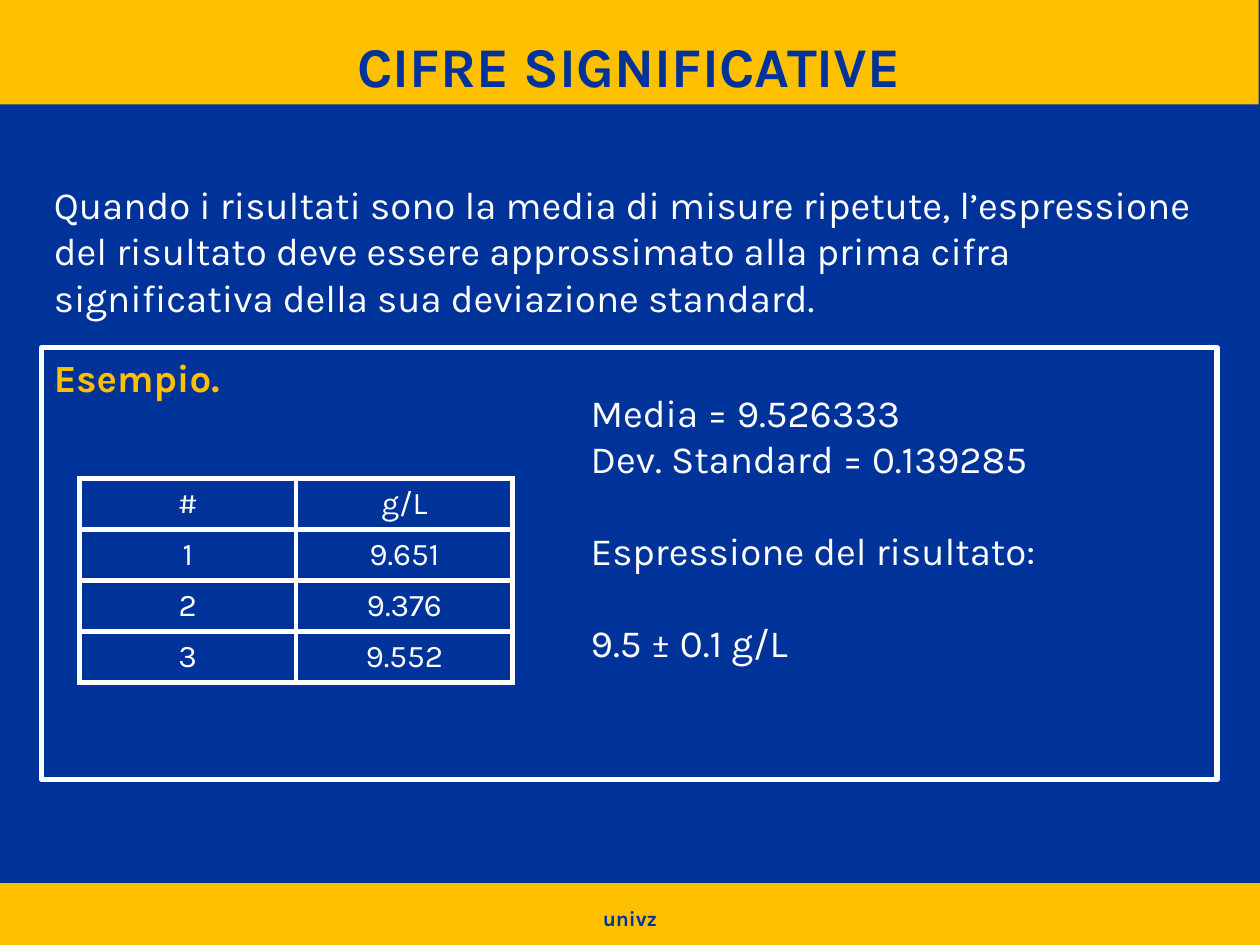
import pptx
import pptx.util
import pptx.dml.color
import pptx.enum.shapes
import pptx.enum.text
import pptx.oxml
import pptx.oxml.ns
from pptx.util import Inches

BLUE, YELLOW, WHITE = "003399", "FFC000", "FFFFFF"
ALIGN = pptx.enum.text.PP_ALIGN
ANCHOR = pptx.enum.text.MSO_ANCHOR
RECTANGLE = pptx.enum.shapes.MSO_SHAPE.RECTANGLE


def color(value):
    return pptx.dml.color.RGBColor.from_string(value)


def write(paragraph, text, size, text_color, bold=False, align=ALIGN.LEFT):
    paragraph.alignment = align
    run = paragraph.add_run()
    run.text = text
    run.font.name = "Karla"
    run.font.size = pptx.util.Pt(size)
    run.font.bold = bold
    run.font.color.rgb = color(text_color)


presentation = pptx.Presentation()
presentation.slide_width = Inches(10)
presentation.slide_height = Inches(7.5)
slide = presentation.slides.add_slide(presentation.slide_layouts[6])
slide.background.fill.solid()
slide.background.fill.fore_color.rgb = color(BLUE)

# Yellow bands and the outlined example frame
footer_band = slide.shapes.add_shape(RECTANGLE, 0, Inches(7.01), Inches(10), Inches(0.49))
title_band = slide.shapes.add_shape(RECTANGLE, 0, 0, Inches(9.99), Inches(0.83))
for band in (footer_band, title_band):
    band.shadow.inherit = False
    band.fill.solid()
    band.fill.fore_color.rgb = color(YELLOW)
    band.line.fill.background()

frame = slide.shapes.add_shape(RECTANGLE, Inches(0.33), Inches(2.76), Inches(9.33), Inches(3.43))
frame.shadow.inherit = False
frame.fill.background()
frame.line.color.rgb = color(WHITE)
frame.line.width = pptx.util.Pt(3)

# Text boxes
rule_box = slide.shapes.add_textbox(Inches(0.33), Inches(1.39), Inches(9.33), Inches(1.3))
result_box = slide.shapes.add_textbox(Inches(4.59), Inches(3.04), Inches(5), Inches(2.32))
footer_box = slide.shapes.add_textbox(Inches(3.31), Inches(7.09), Inches(3.38), Inches(0.4))

for shape, anchor, text, size, text_color, bold, align in (
    (title_band, ANCHOR.BOTTOM, "CIFRE SIGNIFICATIVE", 32, BLUE, True, ALIGN.CENTER),
    (rule_box, ANCHOR.TOP,
     "Quando i risultati sono la media di misure ripetute, l’espressione del risultato "
     "deve essere approssimato alla prima cifra significativa della sua deviazione standard.",
     22, WHITE, False, ALIGN.LEFT),
    (frame, ANCHOR.TOP, "Esempio.", 22, YELLOW, True, ALIGN.LEFT),
    (footer_box, ANCHOR.MIDDLE, "univz", 12, BLUE, True, ALIGN.CENTER),
):
    shape.text_frame.word_wrap = True
    shape.text_frame.vertical_anchor = anchor
    write(shape.text_frame.paragraphs[0], text, size, text_color, bold, align)

# Results, with a line's worth of space before each new group
result_box.text_frame.word_wrap = True
for index, (text, space_before) in enumerate((
    ("Media = 9.526333", 0),
    ("Dev. Standard = 0.139285", 0),
    ("Espressione del risultato:", 26),
    ("9.5 ± 0.1 g/L", 26),
)):
    text_frame = result_box.text_frame
    paragraph = text_frame.add_paragraph() if index else text_frame.paragraphs[0]
    paragraph.space_before = pptx.util.Pt(space_before)
    write(paragraph, text, 22, WHITE)

# Table of measurements
measurements = (("#", "g/L"), ("1", "9.651"), ("2", "9.376"), ("3", "9.552"))
table = slide.shapes.add_table(
    len(measurements), 2, Inches(0.63), Inches(3.8), Inches(3.44), Inches(1.62)
).table
table.first_row = False
table.horz_banding = False
for row_index, row in enumerate(measurements):
    for column_index, text in enumerate(row):
        cell = table.cell(row_index, column_index)
        cell.fill.background()
        write(cell.text_frame.paragraphs[0], text, 18, WHITE, align=ALIGN.CENTER)
        properties = cell._tc.get_or_add_tcPr()
        for position, side in enumerate(("lnL", "lnR", "lnT", "lnB")):
            border = pptx.oxml.parse_xml(
                f'<a:{side} {pptx.oxml.ns.nsdecls("a")} w="{pptx.util.Pt(3)}">'
                f'<a:solidFill><a:srgbClr val="{WHITE}"/></a:solidFill></a:{side}>'
            )
            properties.insert(position, border)

presentation.save("out.pptx")
